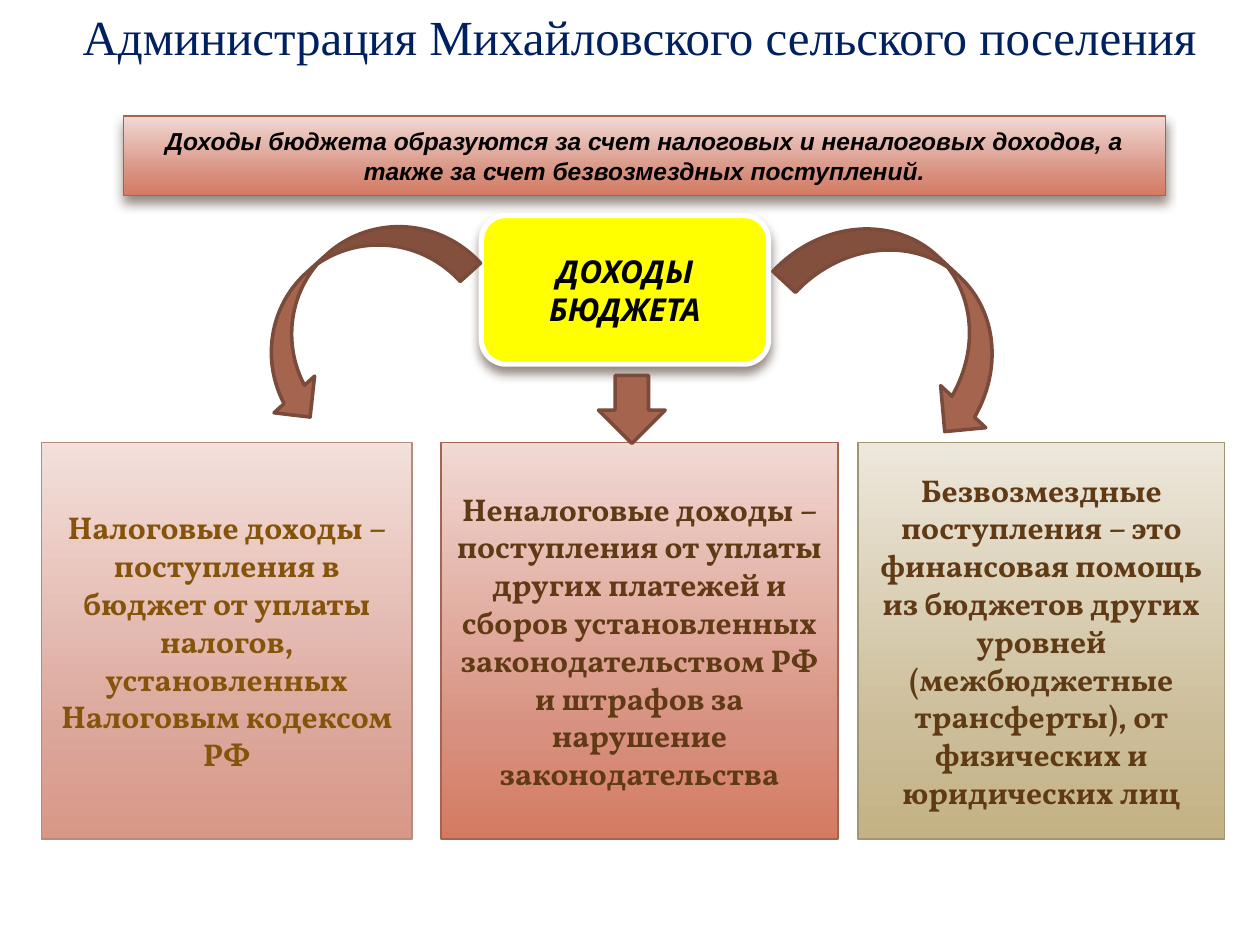
from copy import deepcopy

from lxml import etree
from pptx import Presentation
from pptx.dml.color import RGBColor
from pptx.enum.shapes import MSO_SHAPE
from pptx.enum.text import MSO_ANCHOR, MSO_AUTO_SIZE, PP_ALIGN
from pptx.oxml.ns import qn
from pptx.util import Inches, Pt

CENTER = PP_ALIGN.CENTER
MIDDLE = MSO_ANCHOR.MIDDLE
RECTANGLE = MSO_SHAPE.RECTANGLE

NAVY = RGBColor(0x00, 0x20, 0x60)
BLACK = RGBColor(0x00, 0x00, 0x00)
WHITE = RGBColor(0xFF, 0xFF, 0xFF)
YELLOW = RGBColor(0xFF, 0xFF, 0x00)
BROWN = RGBColor(0x60, 0x3A, 0x14)
OCHRE = RGBColor(0x85, 0x54, 0x0A)
RUST = RGBColor(0xA5, 0x64, 0x4E)
DARK_RUST = RGBColor(0x7A, 0x4A, 0x3A)
DUSTY_ROSE = RGBColor(0xB5, 0x8B, 0x80)
OLIVE = RGBColor(0xA1, 0x95, 0x74)
SHADOW = RGBColor(0x4E, 0x3B, 0x30)
RED_GRADIENT = [RGBColor(0xF1, 0xD9, 0xD4), RGBColor(0xD8, 0x91, 0x80), RGBColor(0xD4, 0x7A, 0x62)]
PINK_GRADIENT = [RGBColor(0xF3, 0xE0, 0xDB), RGBColor(0xDC, 0xA7, 0x9B), RGBColor(0xD8, 0x97, 0x87)]
SAND_GRADIENT = [RGBColor(0xED, 0xE8, 0xDC), RGBColor(0xCC, 0xBD, 0x99), RGBColor(0xC4, 0xB2, 0x84)]


def add_panel(kind, left, top, width, height, fill, line_color, line_width):
    """Add a shape whose fill is one colour or a list of three gradient colours."""
    shape = slide.shapes.add_shape(kind, Inches(left), Inches(top), Inches(width), Inches(height))
    shape.shadow.inherit = False
    if isinstance(fill, list):
        shape.fill.gradient()
        shape.fill.gradient_angle = 270
        stop_list = shape._element.spPr.find(".//" + qn("a:gsLst"))
        stop_list.append(deepcopy(stop_list[-1]))
        for stop, position, color in zip(shape.fill.gradient_stops, (0, 0.72, 1), fill):
            stop.position = position
            stop.color.rgb = color
    else:
        shape.fill.solid()
        shape.fill.fore_color.rgb = fill
    shape.line.color.rgb = line_color
    shape.line.width = Pt(line_width)
    return shape


def write_text(shape, text, font_name, size, color, bold=True, italic=False):
    frame = shape.text_frame
    frame.word_wrap = True
    frame.vertical_anchor = MIDDLE
    paragraph = frame.paragraphs[0]
    paragraph.text = text
    paragraph.alignment = CENTER
    font = paragraph.font
    font.name, font.size, font.bold, font.italic = font_name, Pt(size), bold, italic
    font.color.rgb = color


presentation = Presentation()
presentation.slide_width = Inches(10)
presentation.slide_height = Inches(7.5)
slide = presentation.slides.add_slide(presentation.slide_layouts[5])

title = slide.shapes.title
title.left, title.top, title.width, title.height = Inches(0.15), Inches(0), Inches(9.85), Inches(0.57)
write_text(title, "Администрация Михайловского сельского поселения", "Times New Roman", 28, NAVY, bold=False)
title.text_frame.vertical_anchor = MSO_ANCHOR.TOP
title.text_frame.auto_size = MSO_AUTO_SIZE.SHAPE_TO_FIT_TEXT

banner = add_panel(RECTANGLE, 0.98, 0.92, 8.27, 0.63, RED_GRADIENT, RUST, 0.79)
write_text(
    banner,
    "Доходы бюджета образуются за счет налоговых и неналоговых доходов, "
    "а также за счет безвозмездных поступлений.",
    "Arial", 14, BLACK, italic=True)

income = add_panel(MSO_SHAPE.ROUNDED_RECTANGLE, 3.82, 1.71, 2.28, 1.18, YELLOW, WHITE, 3)
write_text(income, "ДОХОДЫ БЮДЖЕТА", "Cabin", 18, BLACK, italic=True)

for shape in (banner, income):
    effects = shape._element.spPr.find(qn("a:effectLst"))
    shadow = etree.SubElement(effects, qn("a:outerShdw"), blurRad=str(Pt(6)), dist=str(Pt(4)),
                              dir="5400000", rotWithShape="0")
    shadow_color = etree.SubElement(shadow, qn("a:srgbClr"), val=str(SHADOW))
    etree.SubElement(shadow_color, qn("a:alpha"), val="60000")

sources = [
    (0.33, 2.94, PINK_GRADIENT, DUSTY_ROSE, OCHRE,
     "Налоговые доходы – поступления в бюджет от уплаты налогов, "
     "установленных Налоговым кодексом РФ"),
    (3.5, 3.15, RED_GRADIENT, RUST, BROWN,
     "Неналоговые доходы – поступления от уплаты других платежей и сборов "
     "установленных законодательством РФ и штрафов за нарушение законодательства"),
    (6.81, 2.91, SAND_GRADIENT, OLIVE, BROWN,
     "Безвозмездные поступления – это финансовая помощь из бюджетов других уровней "
     "(межбюджетные трансферты), от физических и юридических лиц"),
]
for left, width, gradient, line_color, text_color, text in sources:
    source = add_panel(RECTANGLE, left, 3.51, width, 3.15, gradient, line_color, 0.79)
    write_text(source, text, "Vollkorn", 18, text_color)

arrows = [
    (MSO_SHAPE.CURVED_RIGHT_ARROW, 2.33, 1.43, 0.87, 2.04, 47.9),
    (MSO_SHAPE.DOWN_ARROW, 4.75, 2.98, 0.53, 0.54, 0),
    (MSO_SHAPE.CURVED_LEFT_ARROW, 6.75, 1.46, 0.98, 2.11, 313),
]
for kind, left, top, width, height, rotation in arrows:
    arrow = add_panel(kind, left, top, width, height, RUST, DARK_RUST, 2)
    arrow.rotation = rotation

presentation.save("out.pptx")
